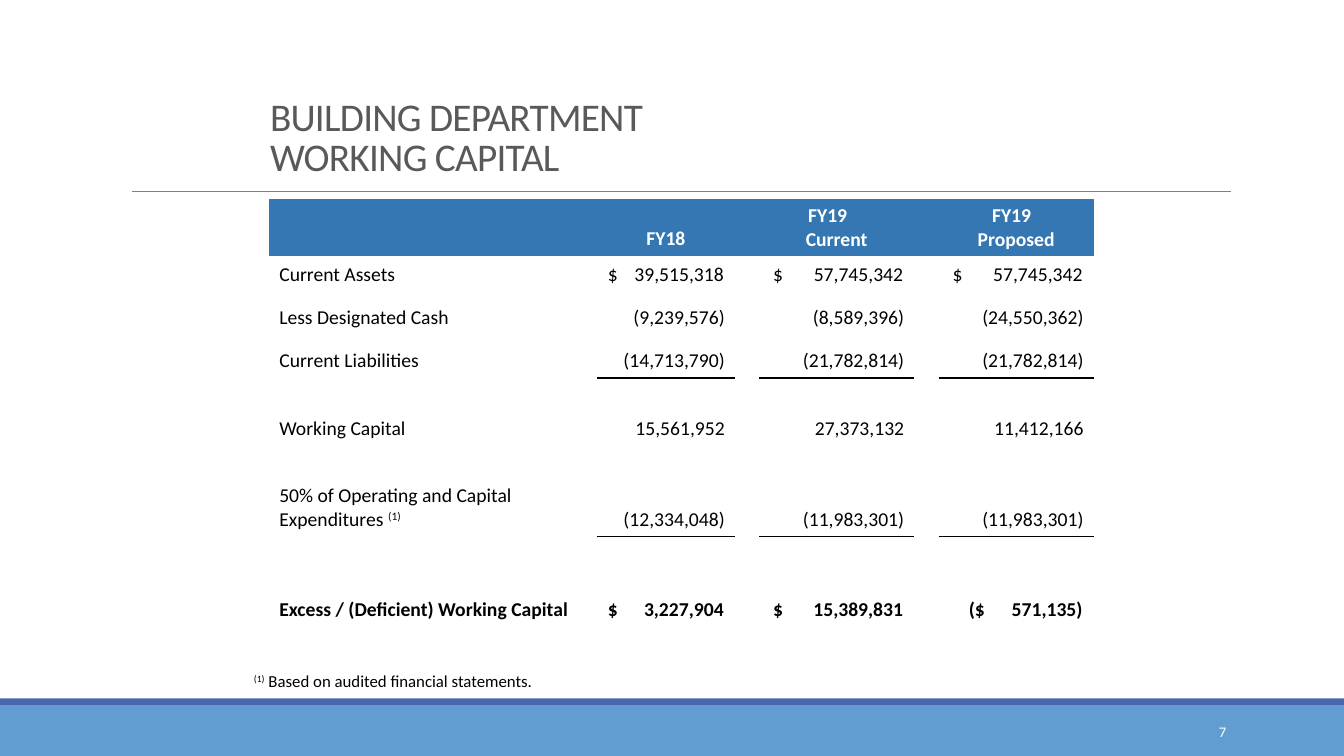
from lxml import etree
from pptx import Presentation
from pptx.dml.color import RGBColor
from pptx.enum.shapes import MSO_CONNECTOR, MSO_SHAPE
from pptx.enum.text import MSO_ANCHOR, PP_ALIGN
from pptx.oxml.ns import qn
from pptx.util import Inches, Pt

FONT = "Calibri"
TITLE = "BUILDING DEPARTMENT\vWORKING CAPITAL"
NOTE_MARK = "(1)"
NOTE = " Based on audited financial statements."
PAGE = "7"

HEADERS = ["FY18", "FY19\nCurrent", "FY19\nProposed"]
# row height, label, amounts; a tab separates the dollar sign from its number
ROWS = [
    (0.35, "Current Assets", ["$\t39,515,318", "$\t57,745,342", "$\t57,745,342"]),
    (0.43, "Less Designated Cash", ["(9,239,576)", "(8,589,396)", "(24,550,362)"]),
    (0.43, "Current Liabilities", ["(14,713,790)", "(21,782,814)", "(21,782,814)"]),
    (0.33, "", []),
    (0.33, "Working Capital", ["15,561,952", "27,373,132", "11,412,166"]),
    (0.33, "", []),
    (0.57, "50% of Operating and Capital Expenditures ",
     ["(12,334,048)", "(11,983,301)", "(11,983,301)"]),
    (0.33, "", []),
    (0.56, "Excess / (Deficient) Working Capital",
     ["$\t3,227,904", "$\t15,389,831", "($\t571,135)"]),
]
HEADER_HEIGHT = 0.57
COLUMN_WIDTHS = [3.25, 1.37, 0.23, 1.54, 0.23, 1.54]
AMOUNT_COLUMNS = [1, 3, 5]
DOLLAR_INSETS = [0.11, 0.14, 0.14]
DEFICIT_INSET = 0.3
YEAR_SHIFTS = [0, 0.18, 0.09]
UNDERLINED_ROWS = [3, 7]
NOTED_ROW = 7
TOTAL_ROW = len(ROWS)
CELL_MARGIN = 0.1
NO_GRID_STYLE = "{2D5ABB26-0587-4C30-8999-92F81FD0307C}"


def color(value):
    return RGBColor.from_string(value)


def format_run(run, size, ink, bold=False, raised=False):
    run.font.name = FONT
    run.font.size = Pt(size)
    run.font.bold = bold
    run.font.color.rgb = color(ink)
    if raised:
        run.font._element.set("baseline", "30000")


def add_band(slide, top, height, fill):
    band = slide.shapes.add_shape(MSO_SHAPE.RECTANGLE, 0, Inches(top),
                                  Inches(13.33), Inches(height))
    band.shadow.inherit = False
    band.fill.solid()
    band.fill.fore_color.rgb = color(fill)
    band.line.fill.background()


def add_text(slide, box, pieces, size, ink, anchor=MSO_ANCHOR.TOP):
    """Add a one-paragraph box; pieces are (text, raised) pairs."""
    shape = slide.shapes.add_textbox(*map(Inches, box))
    frame = shape.text_frame
    frame.word_wrap = True
    frame.vertical_anchor = anchor
    paragraph = frame.paragraphs[0]
    for text, raised in pieces:
        run = paragraph.add_run()
        run.text = text
        format_run(run, size, ink, raised=raised)
    return paragraph


def set_cell(cell, text, align, ink="000000", bold=False):
    cell.vertical_anchor = MSO_ANCHOR.BOTTOM
    cell.text_frame.text = text
    for paragraph in cell.text_frame.paragraphs:
        paragraph.alignment = align
        for run in paragraph.runs:
            format_run(run, 14, ink, bold)
        if not paragraph.runs:
            etree.SubElement(paragraph._p, qn("a:endParaRPr"), sz="1400")


def set_dollar_tab(cell, width, inset):
    """Start the dollar sign at the inset and end the number at the right margin."""
    cell.margin_left = Inches(inset)
    properties = cell.text_frame.paragraphs[0]._p.get_or_add_pPr()
    stops = etree.SubElement(properties, qn("a:tabLst"))
    position = Inches(width - inset - CELL_MARGIN - 0.01)
    etree.SubElement(stops, qn("a:tab"), pos=str(position), algn="r")


def underline_cell(cell):
    properties = cell._tc.get_or_add_tcPr()
    line = etree.Element(qn("a:lnB"), w=str(Pt(1)))
    fill = etree.SubElement(line, qn("a:solidFill"))
    etree.SubElement(fill, qn("a:srgbClr"), val="000000")
    properties.insert(0, line)


def add_capital_table(slide):
    heights = [HEADER_HEIGHT] + [height for height, _, _ in ROWS]
    table = slide.shapes.add_table(
        len(heights), len(COLUMN_WIDTHS), Inches(2.67), Inches(1.97),
        Inches(sum(COLUMN_WIDTHS)), Inches(sum(heights))).table
    table.first_row = table.horz_banding = False
    table._tbl.tblPr.find(qn("a:tableStyleId")).text = NO_GRID_STYLE
    for column, width in zip(table.columns, COLUMN_WIDTHS):
        column.width = Inches(width)
    for row, height in zip(table.rows, heights):
        row.height = Inches(height)

    for cell in table.iter_cells():
        cell.fill.background()
        set_cell(cell, "", PP_ALIGN.LEFT)
    for cell in table.rows[0].cells:
        cell.fill.solid()
        cell.fill.fore_color.rgb = color("3477B2")
    for column, text, shift in zip(AMOUNT_COLUMNS, HEADERS, YEAR_SHIFTS):
        cell = table.cell(0, column)
        set_cell(cell, text, PP_ALIGN.CENTER, "FFFFFF", True)
        if shift:
            cell.margin_right = Inches(CELL_MARGIN + shift)
            caption = cell.text_frame.paragraphs[1]
            caption._p.get_or_add_pPr().set("marL", str(Inches(shift)))

    for row, (_, label, amounts) in enumerate(ROWS, 1):
        bold = row == TOTAL_ROW
        if label:
            set_cell(table.cell(row, 0), label, PP_ALIGN.LEFT, bold=bold)
        for column, amount, inset in zip(AMOUNT_COLUMNS, amounts, DOLLAR_INSETS):
            cell = table.cell(row, column)
            tabbed = "\t" in amount
            set_cell(cell, amount, PP_ALIGN.LEFT if tabbed else PP_ALIGN.RIGHT, bold=bold)
            if tabbed:
                deficit = amount.startswith("(")
                set_dollar_tab(cell, COLUMN_WIDTHS[column],
                               DEFICIT_INSET if deficit else inset)
            if row in UNDERLINED_ROWS:
                underline_cell(cell)

    mark = table.cell(NOTED_ROW, 0).text_frame.paragraphs[0].add_run()
    mark.text = NOTE_MARK
    format_run(mark, 14, "000000", raised=True)
    for paragraph in (p for cell in table.iter_cells() for p in cell.text_frame.paragraphs):
        end = paragraph._p.find(qn("a:endParaRPr"))
        if end is not None:
            paragraph._p.append(end)


def main():
    presentation = Presentation()
    presentation.slide_width = Inches(13.33)
    presentation.slide_height = Inches(7.5)
    slide = presentation.slides.add_slide(presentation.slide_layouts[6])

    add_band(slide, 7, 0.5, "629DD1")
    add_band(slide, 6.93, 0.07, "4A66AC")
    rule = slide.shapes.add_connector(MSO_CONNECTOR.STRAIGHT, Inches(1.31), Inches(1.9),
                                      Inches(12.21), Inches(1.9))
    rule.line.color.rgb = color("808080")
    rule.line.width = Pt(0.5)
    etree.SubElement(rule._element.spPr, qn("a:effectLst"))

    title = add_text(slide, (2.58, 0.91, 9.33, 0.92), [], 28, "595959", MSO_ANCHOR.BOTTOM)
    title.text = TITLE
    title.line_spacing = 0.85
    for run in title.runs:
        format_run(run, 28, "595959")
        run.font._element.set("spc", "-50")

    add_capital_table(slide)
    add_text(slide, (2.42, 6.61, 7.33, 0.3), [(NOTE_MARK, True), (NOTE, False)], 12, "000000")
    page = add_text(slide, (10.83, 7.06, 1.43, 0.4), [(PAGE, False)], 10.5, "FFFFFF",
                    MSO_ANCHOR.MIDDLE)
    page.alignment = PP_ALIGN.RIGHT
    presentation.save("out.pptx")


if __name__ == "__main__":
    main()
